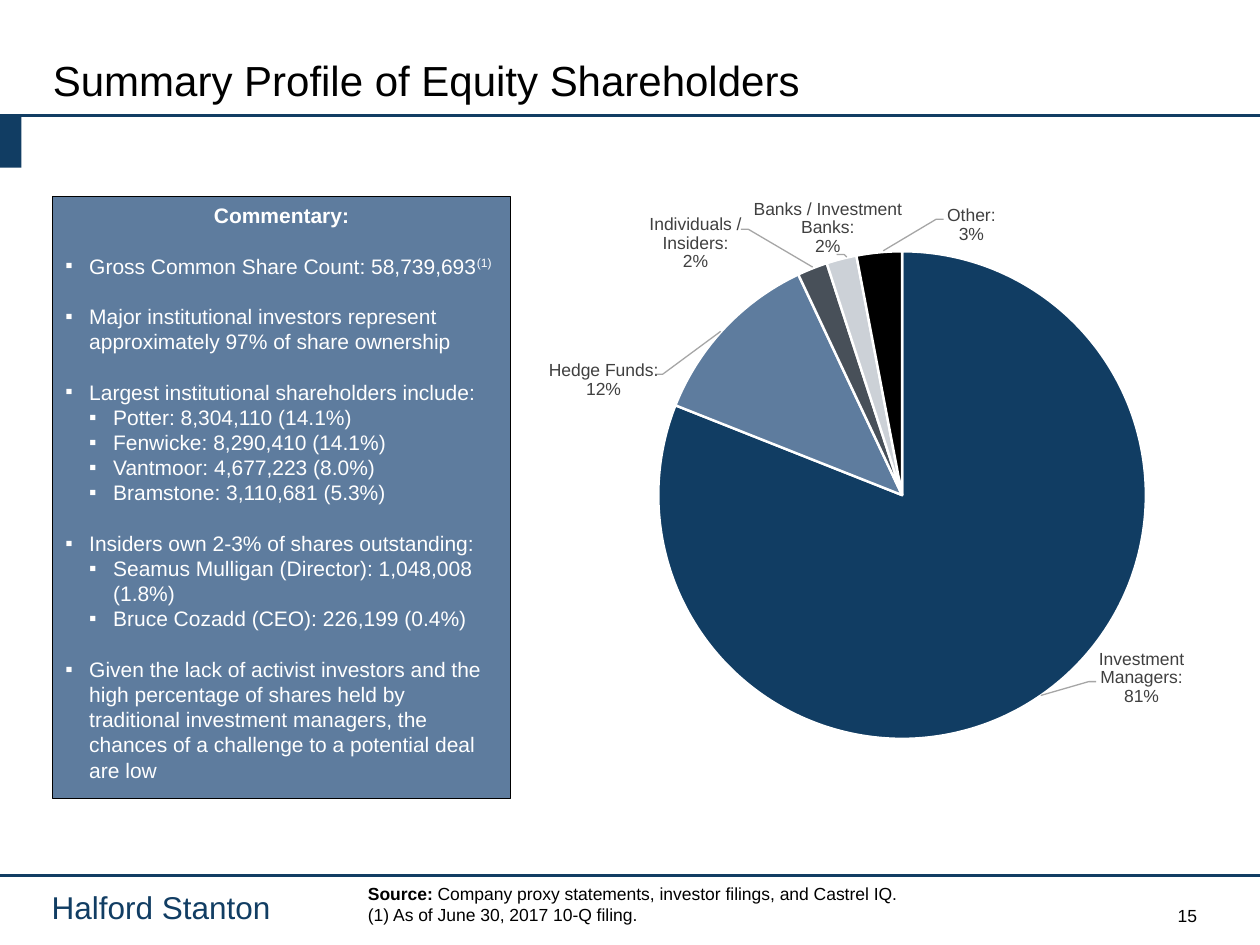
from lxml import etree
from pptx import Presentation
from pptx.chart import data
from pptx.enum import chart as charts, shapes, text as texts
from pptx.dml.color import RGBColor
from pptx.oxml import ns
from pptx.util import Inches, Pt

COLORS = {
    "navy": "113D63", "steel": "5E7C9E", "slate": "485059", "mist": "CCD1D7",
    "black": "000000", "white": "FFFFFF", "label": "404040", "leader": "A6A6A6",
}
ALIGN = texts.PP_ALIGN
ANCHOR = texts.MSO_ANCHOR


def rgb(name):
    return RGBColor.from_string(COLORS[name])


def write(frame, text, size=12, color="black", bold=False, align=ALIGN.LEFT,
          spacing=None, before=0, indent=None, raised=None, lead=None):
    paragraph = frame.paragraphs[0]
    if paragraph.runs:
        paragraph = frame.add_paragraph()
    paragraph.alignment = align
    paragraph.space_before = Pt(before)
    if spacing:
        paragraph.line_spacing = Pt(spacing)
    if indent:
        properties = paragraph._p.get_or_add_pPr()
        properties.set("marL", str(Inches(indent)))
        properties.set("indent", str(Inches(-0.19)))
        etree.SubElement(properties, ns.qn("a:buFont")).set("typeface", "Arial")
        etree.SubElement(properties, ns.qn("a:buChar")).set("char", "▪")
    for part, heavy, baseline in ((lead, True, None), (text, bold, None), (raised, bold, "30000")):
        if part:
            run = paragraph.add_run()
            run.text = part
            run.font.name = "Arial"
            run.font.size = Pt(size)
            run.font.bold = heavy
            run.font.color.rgb = rgb(color)
            if baseline:
                run._r.get_or_add_rPr().set("baseline", baseline)


prs = Presentation()
prs.slide_width, prs.slide_height = Inches(10), Inches(7.5)
slide = prs.slides.add_slide(prs.slide_layouts[6])

for rule_y in (0.92, 6.95):
    rule = slide.shapes.add_connector(
        shapes.MSO_CONNECTOR.STRAIGHT, Inches(0), Inches(rule_y), Inches(10), Inches(rule_y))
    rule.line.color.rgb = rgb("navy")
    rule.line.width = Pt(1.75)
    etree.SubElement(rule._element.spPr, ns.qn("a:effectLst"))

tab = slide.shapes.add_shape(
    shapes.MSO_SHAPE.RECTANGLE, Inches(0), Inches(0.92), Inches(0.17), Inches(0.41))
tab.shadow.inherit = False
tab.fill.solid()
tab.fill.fore_color.rgb = rgb("navy")
tab.line.fill.background()

center_x, center_y, frame_side, pie_share = 7.16, 3.93, 4.3, 0.9
holders = [("Investment Managers", 81, "navy"), ("Hedge Funds", 12, "steel"),
           ("Individuals / Insiders", 2, "slate"), ("Banks / Investment Banks", 2, "mist"),
           ("Other", 3, "black")]
ownership = data.CategoryChartData(number_format='0"%"')
ownership.categories = [name for name, share, color in holders]
ownership.add_series("Share ownership", [share for name, share, color in holders])
pie = slide.shapes.add_chart(
    charts.XL_CHART_TYPE.PIE, Inches(center_x - frame_side / 2), Inches(center_y - frame_side / 2),
    Inches(frame_side), Inches(frame_side), ownership).chart
pie.has_legend = False
pie.has_title = False
pie.font.name = "Arial"
pie.font.size = Pt(10)
pie.font.color.rgb = rgb("label")
pie.plots[0].vary_by_categories = True
for index, (name, share, color) in enumerate(holders):
    wedge = pie.plots[0].series[0].points[index].format
    wedge.fill.solid()
    wedge.fill.fore_color.rgb = rgb(color)
    wedge.line.color.rgb = rgb("white")
    wedge.line.width = Pt(1.38)

plot_area = pie._chartSpace.chart.plotArea
for old_layout in plot_area.findall(ns.qn("c:layout")):
    plot_area.remove(old_layout)
layout = etree.Element(ns.qn("c:layout"))
manual = etree.SubElement(layout, ns.qn("c:manualLayout"))
margin = (1 - pie_share) / 2
for tag, value in (("layoutTarget", "inner"), ("xMode", "edge"), ("yMode", "edge"),
                   ("x", margin), ("y", margin), ("w", pie_share), ("h", pie_share)):
    etree.SubElement(manual, ns.qn("c:" + tag)).set(
        "val", value if isinstance(value, str) else f"{value:.2f}")
plot_area.insert(0, layout)

leaders = [
    [(8.26, 5.52), (8.64, 5.41), (8.7, 5.41)],
    [(5.72, 2.63), (5.26, 2.97), (5.2, 2.97)],
    [(6.45, 2.12), (5.94, 1.82), (5.88, 1.82)],
    [(6.72, 2.04), (6.7, 2.02), (6.64, 2.02)],
    [(7.01, 1.99), (7.43, 1.74), (7.49, 1.74)],
]
for start, *bends in leaders:
    builder = slide.shapes.build_freeform(Inches(start[0]), Inches(start[1]))
    builder.add_line_segments([(Inches(x), Inches(y)) for x, y in bends], close=False)
    leader = builder.convert_to_shape()
    leader.shadow.inherit = False
    leader.fill.background()
    leader.line.color.rgb = rgb("leader")
    leader.line.width = Pt(0.75)

commentary = slide.shapes.add_shape(
    shapes.MSO_SHAPE.RECTANGLE, Inches(0.42), Inches(1.56), Inches(3.63), Inches(4.78))
commentary.shadow.inherit = False
commentary.fill.solid()
commentary.fill.fore_color.rgb = rgb("steel")
commentary.line.color.rgb = rgb("black")
commentary.line.width = Pt(0.5)
commentary.text_frame.word_wrap = True
commentary.text_frame.vertical_anchor = ANCHOR.TOP
write(commentary.text_frame, "Commentary:", color="white", bold=True,
      align=ALIGN.CENTER, spacing=14.4)
remarks = [
    ("Gross Common Share Count: 58,739,693", "(1)", []),
    ("Major institutional investors represent approximately 97% of share ownership", None, []),
    ("Largest institutional shareholders include:", None,
     ["Potter: 8,304,110 (14.1%)", "Fenwicke: 8,290,410 (14.1%)",
      "Vantmoor: 4,677,223 (8.0%)", "Bramstone: 3,110,681 (5.3%)"]),
    ("Insiders own 2-3% of shares outstanding:", None,
     ["Seamus Mulligan (Director): 1,048,008 (1.8%)", "Bruce Cozadd (CEO): 226,199 (0.4%)"]),
    ("Given the lack of activist investors and the high percentage of shares held by "
     "traditional investment managers, the chances of a challenge to a potential deal are low",
     None, []),
]
for remark, note, details in remarks:
    write(commentary.text_frame, remark, color="white", spacing=14.4, before=14.4,
          indent=0.19, raised=note)
    for detail in details:
        write(commentary.text_frame, detail, color="white", spacing=14.4, indent=0.38)

label = dict(size=10, color="label", align=ALIGN.CENTER, spacing=10.6)
captions = [
    (0.42, 0.43, 9, 0.4, ANCHOR.MIDDLE, ["Summary Profile of Equity Shareholders"], dict(size=24)),
    (0.41, 7.05, 2.5, 0.3, ANCHOR.TOP, ["Halford Stanton"], dict(size=18, color="navy")),
    (7.17, 7.18, 2.33, 0.17, ANCHOR.BOTTOM, ["15"], dict(size=10, align=ALIGN.RIGHT)),
    (8.36, 5.16, 1.4, 0.45, ANCHOR.TOP, ["Investment", "Managers:", "81%"], label),
    (4.09, 2.87, 1.4, 0.3, ANCHOR.TOP, ["Hedge Funds:", "12%"], label),
    (4.82, 1.71, 1.4, 0.45, ANCHOR.TOP, ["Individuals /", "Insiders:", "2%"], label),
    (5.87, 1.59, 1.4, 0.45, ANCHOR.TOP, ["Banks / Investment", "Banks:", "2%"], label),
    (7.01, 1.64, 1.4, 0.3, ANCHOR.TOP, ["Other:", "3%"], label),
    (2.92, 7.01, 5.41, 0.34, ANCHOR.TOP, [], {}),
]
for left, top, width, height, anchor, lines, style in captions:
    frame = slide.shapes.add_textbox(
        Inches(left), Inches(top), Inches(width), Inches(height)).text_frame
    frame.word_wrap = True
    frame.vertical_anchor = anchor
    frame.margin_left = frame.margin_right = frame.margin_top = frame.margin_bottom = 0
    for line in lines:
        write(frame, line, **style)

write(frame, " Company proxy statements, investor filings, and Castrel IQ.",
      size=10, spacing=12, lead="Source:")
write(frame, "(1) As of June 30, 2017 10-Q filing.", size=10, spacing=12)

prs.save("out.pptx")
